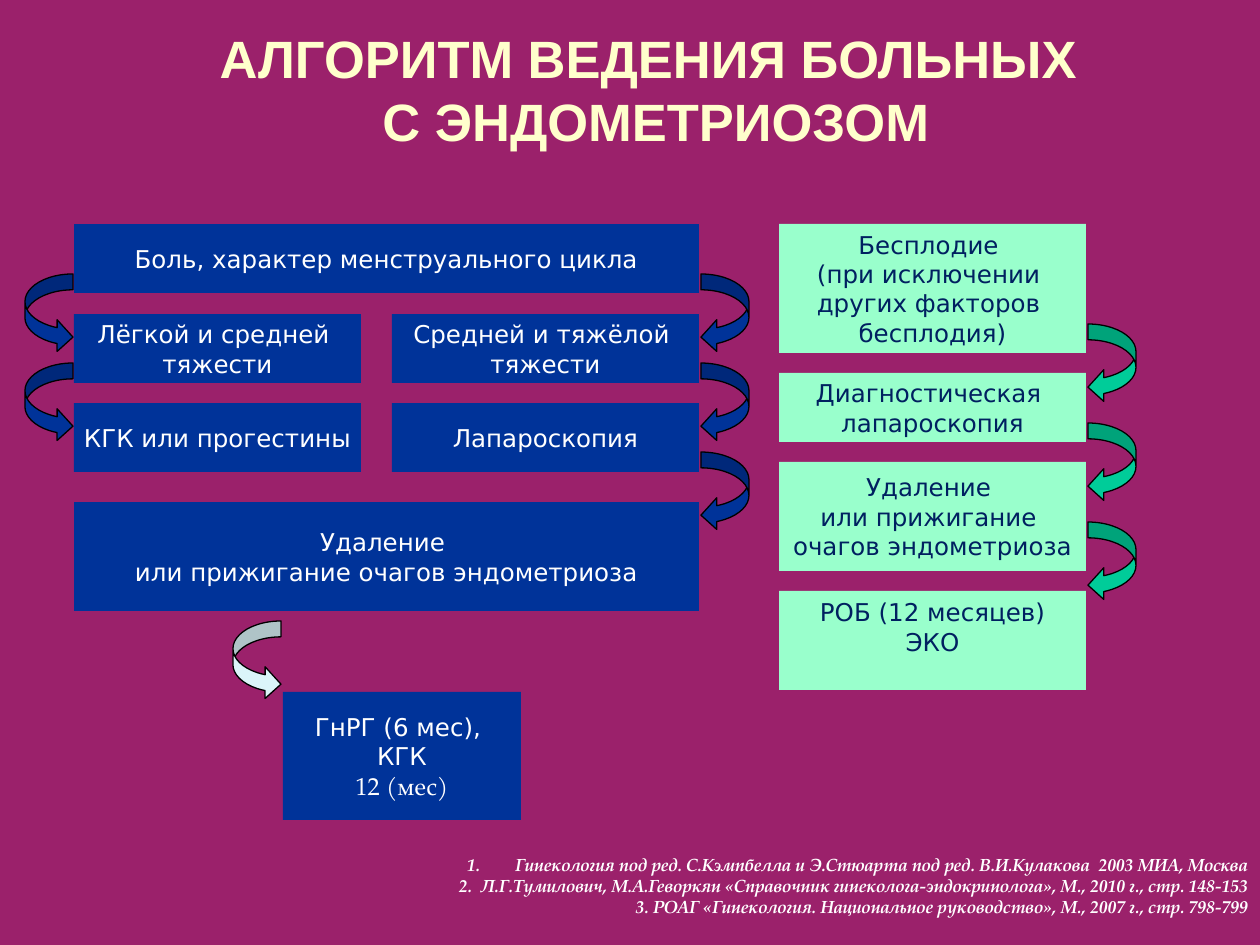
"""Build a slide with the treatment algorithm for patients with endometriosis."""
from copy import deepcopy

from lxml import etree
from pptx import Presentation
from pptx import util as u
from pptx.dml.color import RGBColor
from pptx.enum import shapes, text
from pptx.oxml.ns import qn

SCALE = 914400 / 126
COLORS = {
    "background": "9B216B", "title": "FFFFCC", "white": "FFFFFF", "line": "000000",
    "pain": "003399", "infertility": "99FFCC", "infertility_text": "002060",
    "infertility_arrow": "00CC99", "therapy_arrow": "DBF5F9",
}


def px(*lengths):
    return [u.Emu(round(length * SCALE)) for length in lengths]


def write(frame, wording, size=14, font="DejaVu Sans", color="white", bold=False, italic=False,
          align=text.PP_ALIGN.CENTER, margin=0, indent=0, last_font=None):
    for index, line in enumerate(wording):
        paragraph = frame.paragraphs[0] if index == 0 else frame.add_paragraph()
        paragraph.text = line
        paragraph.alignment = align
        properties = paragraph._p.get_or_add_pPr()
        properties.set("marL", str(px(margin)[0]))
        properties.set("indent", str(px(indent)[0]))
        for run in paragraph.runs:
            run.font.size = u.Pt(size)
            run.font.name = last_font if last_font and index == len(wording) - 1 else font
            run.font.bold, run.font.italic = bold, italic
            run.font.color.rgb = RGBColor.from_string(COLORS[color])
        for line_break in paragraph._p.findall(qn("a:br")):
            line_break.insert(0, deepcopy(paragraph.runs[0]._r.rPr))


deck = Presentation()
deck.slide_width, deck.slide_height = px(1260, 945)
slide = deck.slides.add_slide(deck.slide_layouts[5])
slide.background.fill.solid()
slide.background.fill.fore_color.rgb = RGBColor.from_string(COLORS["background"])

title = slide.shapes.title
title.left, title.top, title.width, title.height = px(88, 0, 1086, 178)
title.text_frame.auto_size = text.MSO_AUTO_SIZE.NONE
title.text_frame.vertical_anchor = text.MSO_ANCHOR.MIDDLE
write(title.text_frame, ["АЛГОРИТМ ВЕДЕНИЯ БОЛЬНЫХ \nС ЭНДОМЕТРИОЗОМ"],
      size=30, font="Arial", color="title", bold=True, margin=50)

MIDDLE, TOP = text.MSO_ANCHOR.MIDDLE, text.MSO_ANCHOR.TOP
steps = [
    ("pain", 74, 224, 625, 69, MIDDLE, ["Боль, характер менструального цикла"]),
    ("pain", 74, 314, 287, 69, MIDDLE, ["Лёгкой и средней ", "тяжести"]),
    ("pain", 392, 314, 307, 69, MIDDLE, ["Средней и тяжёлой ", "тяжести"]),
    ("pain", 74, 403, 287, 69, MIDDLE, ["КГК или прогестины"]),
    ("pain", 392, 403, 307, 69, MIDDLE, ["Лапароскопия"]),
    ("pain", 74, 502, 625, 109, MIDDLE, ["Удаление \nили прижигание очагов эндометриоза"]),
    ("pain", 283, 692, 238, 128, MIDDLE, ["ГнРГ (6 мес), ", "КГК", "12 (мес)"]),
    ("infertility", 779, 224, 307, 129, MIDDLE,
     ["Бесплодие \n(при исключении ", "других факторов \nбесплодия)"]),
    ("infertility", 779, 373, 307, 69, MIDDLE, ["Диагностическая ", "лапароскопия"]),
    ("infertility", 779, 462, 307, 109, MIDDLE,
     ["Удаление \nили прижигание ", "очагов эндометриоза"]),
    ("infertility", 779, 591, 307, 99, TOP, ["РОБ (12 месяцев)", "ЭКО"]),
]
for branch, left, top, width, height, anchor, wording in steps:
    step = slide.shapes.add_shape(shapes.MSO_SHAPE.RECTANGLE, *px(left, top, width, height))
    step.shadow.inherit = False
    step.fill.solid()
    step.fill.fore_color.rgb = RGBColor.from_string(COLORS[branch])
    step.line.fill.background()
    step.text_frame.word_wrap = False
    step.text_frame.vertical_anchor = anchor
    write(step.text_frame, wording, color="white" if branch == "pain" else "infertility_text",
          last_font="TeX Gyre Pagella" if len(wording) == 3 else None)

TO_LEFT, TO_RIGHT = shapes.MSO_SHAPE.CURVED_LEFT_ARROW, shapes.MSO_SHAPE.CURVED_RIGHT_ARROW
arrow_columns = [
    (TO_LEFT, "infertility_arrow", 1088, 324, 99, 3),
    (TO_LEFT, "pain", 701, 274, 89, 3),
    (TO_RIGHT, "pain", 25, 274, 89, 2),
    (TO_RIGHT, "therapy_arrow", 233, 621, 0, 1),
]
for direction, color, left, first_top, pitch, count in arrow_columns:
    for row in range(count):
        arrow = slide.shapes.add_shape(direction, *px(left, first_top + row * pitch, 48, 79))
        arrow.shadow.inherit = False
        for index, value in enumerate((0.33, 0.66, 0.33)):
            arrow.adjustments[index] = value
        arrow.fill.solid()
        arrow.fill.fore_color.rgb = RGBColor.from_string(COLORS[color])
        arrow.line.color.rgb = RGBColor.from_string(COLORS["line"])
        arrow.line.width = u.Pt(0.75)

references = slide.shapes.add_textbox(*px(294, 848, 966, 97)).text_frame
references.word_wrap = True
write(references, [
    "Гинекология под ред. С.Кэмпбелла и Э.Стюарта под ред. В.И.Кулакова  2003 МИА, Москва",
    "2.  Л.Г.Тумилович, М.А.Геворкян «Справочник гинеколога-эндокринолога», М., 2010 г., стр. 148-153",
    "3. РОАГ «Гинекология. Национальное руководство», М., 2007 г., стр. 798-799",
], size=10, font="TeX Gyre Pagella", bold=True, italic=True,
    align=text.PP_ALIGN.RIGHT, margin=48, indent=-48)
etree.SubElement(references.paragraphs[0]._p.pPr, qn("a:buAutoNum"), type="arabicPeriod")

deck.save("out.pptx")
